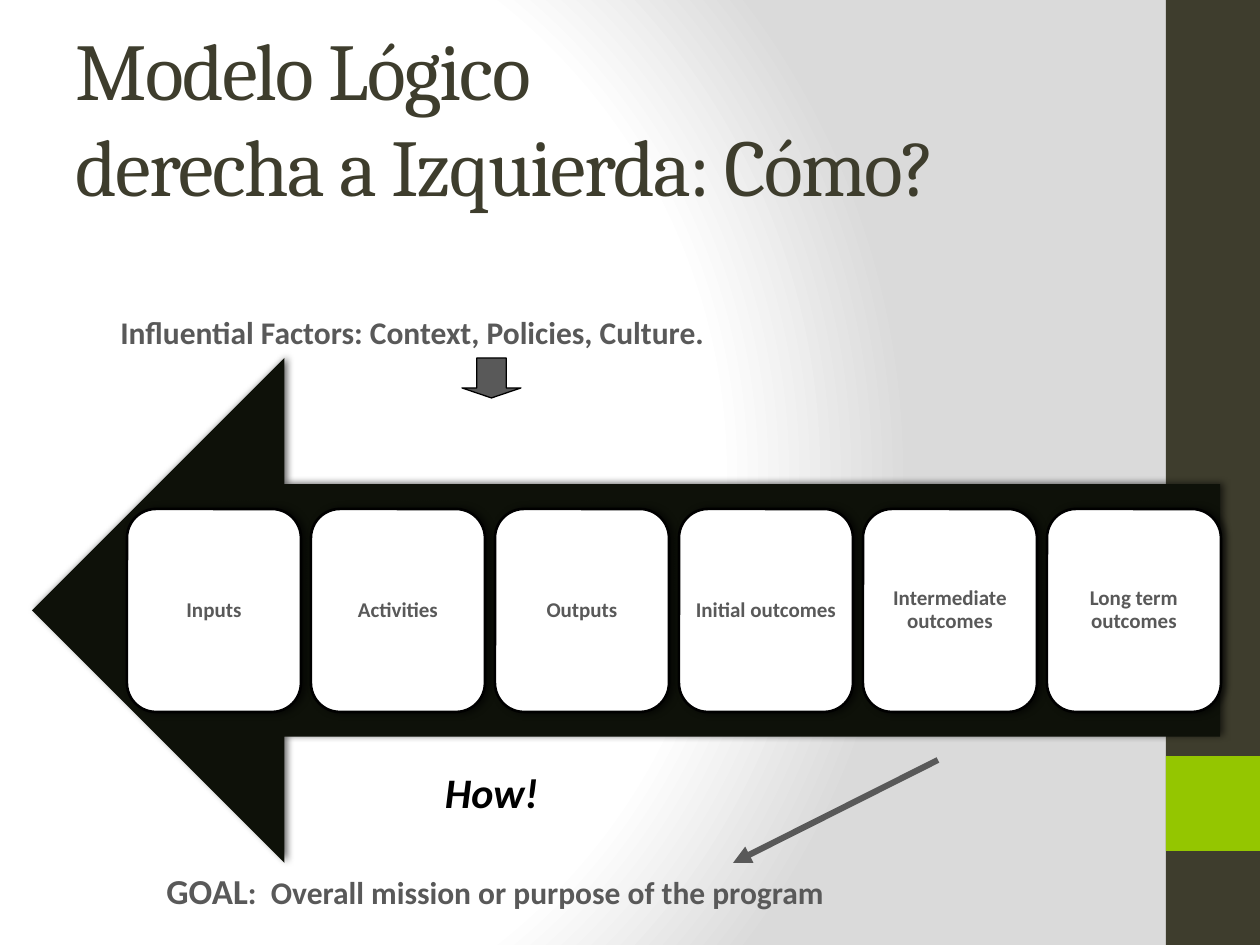
from typing import NamedTuple

from pptx import Presentation
from pptx.dml.color import RGBColor as Rgb
from pptx.enum.shapes import MSO_CONNECTOR as Link, MSO_SHAPE as Kind
from pptx.enum.text import MSO_ANCHOR as Anchor, MSO_AUTO_SIZE as Fit, PP_ALIGN as Align
from pptx.oxml import parse_xml
from pptx.oxml.ns import nsdecls, qn
from pptx.util import Pt

SCALE = 914400 / 126  # EMU in one px
HUES = {
    "olive": "3E3D2D", "lime": "94C600", "arrow": "0E1109", "white": "FFFFFF",
    "gray": "595959", "black": "000000", "edge": "DADADA",
}


class Box(NamedTuple):
    left: int
    top: int
    wide: int
    high: int

    def emu(self) -> list[int]:
        return [px(n) for n in self]


class Run(NamedTuple):
    text: str
    size: int
    italic: bool = False
    hue: str = "gray"


class Note(NamedTuple):
    box: Box
    runs: list[Run]
    align: Align = Align.LEFT


class Form(NamedTuple):
    kind: Kind
    box: Box
    hue: str
    line: float = 0
    shade: bool = False


BARS = [
    Form(Kind.RECTANGLE, Box(1166, 0, 94, 945), "olive"),
    Form(Kind.RECTANGLE, Box(1166, 756, 94, 95), "lime"),
]
ARROW = Form(Kind.LEFT_ARROW, Box(32, 358, 1188, 505), "arrow", shade=True)
DOWN = Form(Kind.DOWN_ARROW, Box(462, 358, 59, 40), "gray", line=0.75)
STEPS = ["Inputs", "Activities", "Outputs", "Initial outcomes",
         "Intermediate outcomes", "Long term outcomes"]
FIRST, PITCH = Box(127, 509, 174, 203), 184
NOTES = [
    Note(Box(154, 863, 1032, 54),
         [Run("GOAL", 20), Run(":  Overall mission or purpose of the program", 18)]),
    Note(Box(108, 307, 755, 50),
         [Run("Influential Factors: Context, Policies, Culture.", 18)]),
    Note(Box(407, 760, 169, 63), [Run("How!", 24, True, "black")], Align.CENTER),
]


def px(count: int) -> int:
    return round(count * SCALE)


def rgb(hue: str) -> Rgb:
    return Rgb.from_string(HUES[hue])


def style(item, **values) -> None:
    for name, value in values.items():
        setattr(item, name, value)


def write(para, run: Run, face: str = "Calibri", bold: bool = True):
    part = para.add_run()
    part.text = run.text
    style(part.font, name=face, size=Pt(run.size), bold=bold, italic=run.italic)
    part.font.color.rgb = rgb(run.hue)
    return part


def draw(slide, form: Form):
    shape = slide.shapes.add_shape(form.kind, *form.box.emu())
    shape.fill.solid()
    shape.fill.fore_color.rgb = rgb(form.hue)
    if form.line:
        shape.line.color.rgb = rgb("black")
        shape.line.width = Pt(form.line)
    else:
        shape.line.fill.background()
    shape.shadow.inherit = False
    if form.shade:
        shape.element.spPr.find(qn("a:effectLst")).append(parse_xml(
            f'<a:outerShdw {nsdecls("a")} blurRad="{Pt(4)}" dist="{Pt(2)}" dir="0">'
            f'<a:srgbClr val="{HUES["black"]}"><a:alpha val="60000"/></a:srgbClr>'
            '</a:outerShdw>'))
    return shape


def step(slide, index: int, text: str) -> None:
    box = FIRST._replace(left=FIRST.left + index * PITCH)
    shape = draw(slide, Form(Kind.ROUNDED_RECTANGLE, box, "white", 1.5, True))
    frame, gap = shape.text_frame, px(6)
    style(frame, word_wrap=True, vertical_anchor=Anchor.MIDDLE, margin_left=gap,
          margin_right=gap, margin_top=gap, margin_bottom=gap)
    para = frame.paragraphs[0]
    style(para, alignment=Align.CENTER, line_spacing=0.9)
    write(para, Run(text, 12))


def label(slide, note: Note) -> None:
    frame = slide.shapes.add_textbox(*note.box.emu()).text_frame
    style(frame, word_wrap=True, auto_size=Fit.SHAPE_TO_FIT_TEXT)
    para = frame.paragraphs[0]
    para.alignment = note.align
    for run in note.runs:
        write(para, run)


def paint(slide) -> None:
    slide.background.fill.solid()
    back = slide.element.find(".//" + qn("p:bgPr"))
    stops = "".join(
        f'<a:gs pos="{at * 1000}"><a:srgbClr val="{HUES[hue]}"/></a:gs>'
        for at, hue in [(0, "white"), (75, "white"), (100, "edge")])
    back.replace(back[0], parse_xml(
        f'<a:gradFill {nsdecls("a")} rotWithShape="1"><a:gsLst>{stops}</a:gsLst>'
        '<a:path path="circle"><a:fillToRect l="20000" t="50000" r="100000" b="50000"/>'
        '</a:path></a:gradFill>'))


def head(slide) -> None:
    title = slide.shapes.title
    box = Box(63, 38, 1113, 157).emu()
    style(title, **dict(zip(("left", "top", "width", "height"), box)))
    frame = title.text_frame
    style(frame, word_wrap=True, auto_size=Fit.NONE, vertical_anchor=Anchor.MIDDLE)
    para = frame.paragraphs[0]
    para.alignment = Align.LEFT
    for index, text in enumerate(["Modelo Lógico", "derecha a Izquierda: Cómo?"]):
        if index:
            para.add_line_break()
        part = write(para, Run(text, 46, hue="olive"), "Cambria", False)
        part.font._element.set("spc", "-100")


def pointer(slide) -> None:
    line = slide.shapes.add_connector(
        Link.STRAIGHT, px(733), px(863), px(938), px(760))
    line.line.color.rgb = rgb("gray")
    line.line.width = Pt(3.5)
    line.line._get_or_add_ln().append(
        parse_xml(f'<a:headEnd {nsdecls("a")} type="triangle"/>'))
    line.element.spPr.append(parse_xml(f'<a:effectLst {nsdecls("a")}/>'))


def main() -> None:
    deck = Presentation()
    style(deck, slide_width=px(1260), slide_height=px(945))
    slide = deck.slides.add_slide(deck.slide_layouts[5])
    # Backdrop and title
    paint(slide)
    for bar in BARS:
        draw(slide, bar)
    head(slide)
    # Big arrow with its steps
    draw(slide, ARROW)
    for index, text in enumerate(STEPS):
        step(slide, index, text)
    # Notes and pointers
    for note in NOTES:
        label(slide, note)
    pointer(slide)
    draw(slide, DOWN).adjustments[1] = 0.25
    deck.save("out.pptx")


if __name__ == "__main__":
    main()
